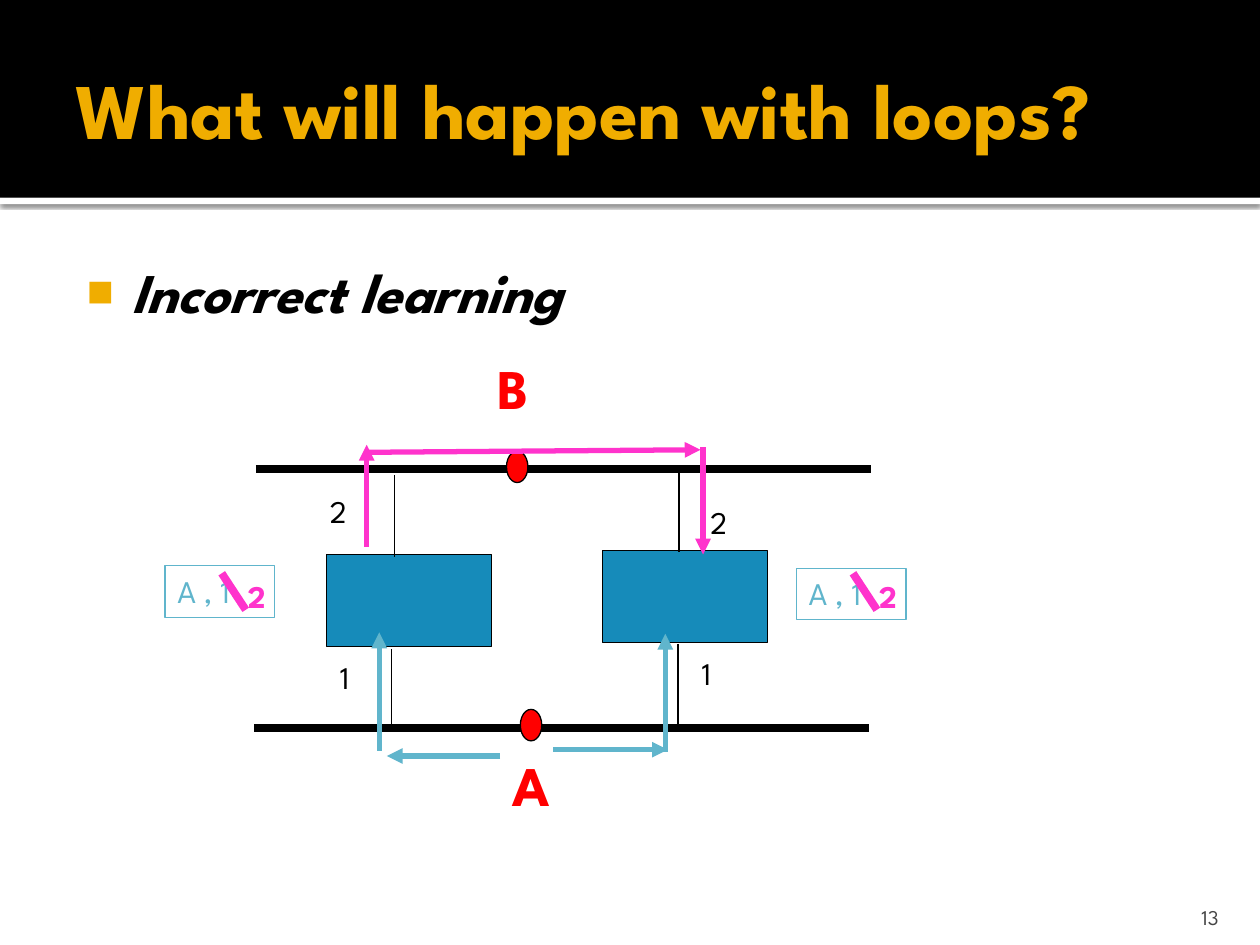
"""Build a slide on how a loop between two bridges causes incorrect learning."""
from dataclasses import dataclass

from lxml import etree
from pptx import Presentation
from pptx.dml.color import RGBColor
from pptx.enum import shapes, text
from pptx.oxml import ns
from pptx.util import Inches, Pt


@dataclass(frozen=True)
class Theme:
    font: str = "League Spartan"
    gold: str = "F0AD00"
    black: str = "000000"
    white: str = "FFFFFF"
    grey: str = "454545"
    bridge: str = "168BBA"
    red: str = "FF0000"
    first: str = "60B5CC"
    second: str = "FF33CC"
    title: float = 45
    heading: float = 32
    label: float = 18
    number: float = 12
    thin: float = 0.75
    arrow: float = 3
    thick: float = 4.5


theme = Theme()


def write(box, words, size=theme.label, color=theme.black, bold=False, italic=False,
          align=text.PP_ALIGN.LEFT, anchor=text.MSO_ANCHOR.TOP, insets=(0.1, 0.05, 0.1, 0.05)):
    frame = box.text_frame
    frame.word_wrap = True
    frame.auto_size = text.MSO_AUTO_SIZE.NONE
    frame.vertical_anchor = anchor
    (frame.margin_left, frame.margin_top,
     frame.margin_right, frame.margin_bottom) = map(Inches, insets)
    para = frame.paragraphs[0]
    para.alignment = align
    para.space_before = Pt(0)
    span = para.add_run()
    span.text = words
    span.font.name = theme.font
    span.font.size = Pt(size)
    span.font.bold = bold
    span.font.italic = italic
    span.font.color.rgb = RGBColor.from_string(color)
    return para


def connect(start, end, color=theme.black, width=theme.thin, arrow=False):
    line = page.shapes.add_connector(
        shapes.MSO_CONNECTOR.STRAIGHT, *map(Inches, (*start, *end)))
    line.line.color.rgb = RGBColor.from_string(color)
    line.line.width = Pt(width)
    if arrow:
        etree.SubElement(line.get_or_add_ln(), ns.qn("a:tailEnd"), type="triangle")
    etree.SubElement(line.element.spPr, ns.qn("a:effectLst"))


deck = Presentation()
deck.slide_width, deck.slide_height = Inches(10), Inches(7.5)
page = deck.slides.add_slide(deck.slide_layouts[1])
title, body = page.placeholders

for top, height, color in [(0, 1.57, theme.black), (1.57, 0.05, theme.white)]:
    band = page.shapes.add_shape(
        shapes.MSO_SHAPE.RECTANGLE, 0, Inches(top), deck.slide_width, Inches(height))
    band.shadow.inherit = False
    band.fill.solid()
    band.fill.fore_color.rgb = RGBColor.from_string(color)
    band.line.fill.background()
    page.shapes.element.insert(2, band.element)

effects = band.element.spPr.find(ns.qn("a:effectLst"))
shadow = etree.SubElement(effects, ns.qn("a:outerShdw"), blurRad=str(Pt(2.5)),
                          dist=str(Pt(0.8)), dir="5400000", rotWithShape="0")
tint = etree.SubElement(shadow, ns.qn("a:srgbClr"), val=theme.black)
etree.SubElement(tint, ns.qn("a:alpha"), val="60000")

title.left, title.top, title.width, title.height = map(Inches, (0.5, 0.17, 9, 1.37))
write(title, "What will happen with loops?", size=theme.title, color=theme.gold, bold=True,
      anchor=text.MSO_ANCHOR.MIDDLE, insets=(0.1, 0.05, 0.05, 0.05))

body.left, body.top, body.width, body.height = map(Inches, (0.5, 1.94, 9, 5.06))
para = write(body, "Incorrect learning", size=theme.heading, bold=True, italic=True,
             insets=(0.06, 0.1, 0.1, 0.05))
props = para._p.get_or_add_pPr()
props.set("marL", str(Inches(0.48)))
props.set("indent", str(Inches(-0.35)))
bullet = etree.SubElement(props, ns.qn("a:buClr"))
etree.SubElement(bullet, ns.qn("a:srgbClr"), val=theme.gold)
etree.SubElement(props, ns.qn("a:buSzPct"), val="80000")
etree.SubElement(props, ns.qn("a:buChar"), char="■")

number = page.shapes.add_textbox(*map(Inches, (8.97, 7.08, 0.8, 0.3)))
write(number, "13", size=theme.number, color=theme.grey, align=text.PP_ALIGN.RIGHT,
      anchor=text.MSO_ANCHOR.BOTTOM, insets=(0.1, 0.05, 0.1, 0))

for left, y in [(2.03, 3.72), (2.02, 5.78)]:
    connect((left, y), (left + 4.88, y), width=theme.thick)

rectangle, oval = shapes.MSO_SHAPE.RECTANGLE, shapes.MSO_SHAPE.OVAL
for kind, left, top, width, height, color in [
    (rectangle, 2.59, 4.4, 1.31, 0.73, theme.bridge),
    (rectangle, 4.78, 4.37, 1.31, 0.73, theme.bridge),
    (oval, 4.13, 5.63, 0.17, 0.25, theme.red),
    (oval, 4.02, 3.58, 0.17, 0.25, theme.red),
]:
    node = page.shapes.add_shape(kind, *map(Inches, (left, top, width, height)))
    node.shadow.inherit = False
    node.fill.solid()
    node.fill.fore_color.rgb = RGBColor.from_string(color)
    node.line.color.rgb = RGBColor.from_string(theme.black)
    node.line.width = Pt(theme.thin)

for x, top in [(3.11, 5.15), (5.38, 5.11), (5.39, 3.73), (3.13, 3.77)]:
    connect((x, top), (x, top + 0.65))

for words, left, top in [("A", 3.97, 5.91), ("B", 3.85, 2.76)]:
    host = page.shapes.add_textbox(*map(Inches, (left, top, 0.79, 0.63)))
    write(host, words, size=theme.heading, color=theme.red, bold=True)

for words, left, top in [("1", 2.6, 5.17), ("1", 5.47, 5.14), ("2", 5.54, 3.94), ("2", 2.52, 3.86)]:
    port = page.shapes.add_textbox(*map(Inches, (left, top, 0.5, 0.4)))
    write(port, words)

for start, end, color in [
    ((3.97, 6), (3.07, 6), theme.first),
    ((4.39, 5.95), (5.3, 5.95), theme.first),
    ((3.01, 5.96), (3.01, 5.02), theme.first),
    ((5.28, 5.97), (5.28, 5.03), theme.first),
    ((2.91, 4.34), (2.91, 3.53), theme.second),
    ((2.91, 3.59), (5.56, 3.57), theme.second),
    ((5.58, 3.55), (5.58, 4.4), theme.second),
]:
    connect(start, end, color=color, width=theme.arrow, arrow=True)

for left, top in [(1.31, 4.49), (6.32, 4.51)]:
    entry = page.shapes.add_textbox(*map(Inches, (left, top, 0.87, 0.41)))
    entry.line.color.rgb = RGBColor.from_string(theme.first)
    entry.line.width = Pt(theme.thin)
    write(entry, "A , 1", color=theme.first)
    update = page.shapes.add_textbox(*map(Inches, (left + 0.56, 4.53, 0.5, 0.4)))
    write(update, "2", color=theme.second, bold=True)
    connect((left + 0.45, 4.55), (left + 0.64, 4.84), color=theme.second, width=theme.thick)

deck.save("out.pptx")
